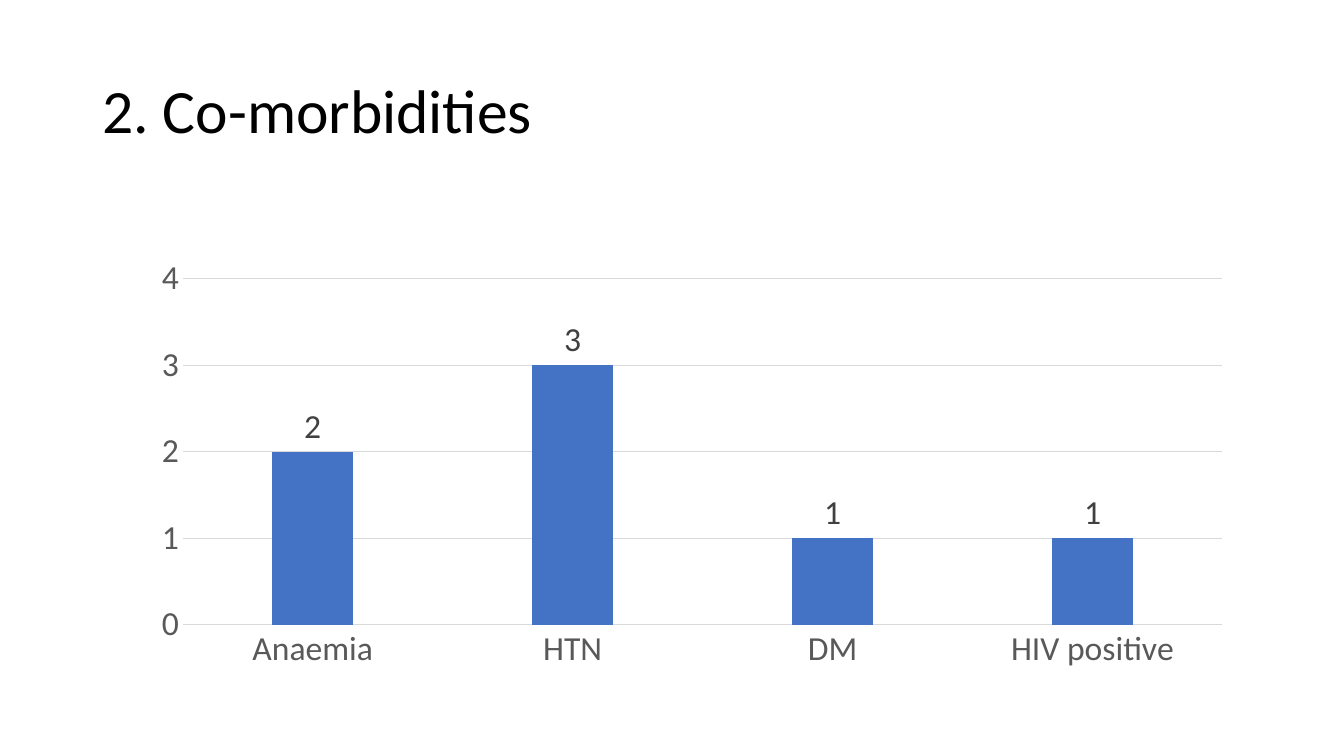
import dataclasses

import lxml.etree
import pptx
import pptx.chart.data
import pptx.dml.color
import pptx.enum.chart
import pptx.enum.text
import pptx.oxml
import pptx.oxml.ns
import pptx.util

Pt = pptx.util.Pt


@dataclasses.dataclass
class Theme:
    face: str = "Calibri"
    ink: str = "000000"
    axis: str = "595959"
    label: str = "404040"
    grid: str = "D9D9D9"
    bar: str = "4472C4"
    head: int = 44
    body: int = 24
    rule: float = 0.75


class Deck:
    def __init__(self, theme):
        self.theme = theme
        self.file = pptx.Presentation()
        self.file.slide_width = Pt(960)
        self.file.slide_height = Pt(540)
        self.slide = self.file.slides.add_slide(self.file.slide_layouts[6])

    def color(self, code):
        return pptx.dml.color.RGBColor.from_string(code)

    def style(self, font, size, code):
        font.name = self.theme.face
        font.size = Pt(size)
        font.bold = False
        font.color.rgb = self.color(code)

    def rule(self, line):
        line.color.rgb = self.color(self.theme.grid)
        line.width = Pt(self.theme.rule)

    def title(self, text, box):
        frame = self.slide.shapes.add_textbox(*map(Pt, box)).text_frame
        frame.word_wrap = True
        frame.vertical_anchor = pptx.enum.text.MSO_ANCHOR.MIDDLE
        para = frame.paragraphs[0]
        para.text = text
        para.line_spacing = 0.9
        self.style(para.font, self.theme.head, self.theme.ink)

    def columns(self, name, values, box, plot, top):
        kinds = pptx.enum.chart
        data = pptx.chart.data.CategoryChartData()
        data.categories = list(values)
        data.add_series(name, list(values.values()))
        chart = self.slide.shapes.add_chart(
            kinds.XL_CHART_TYPE.COLUMN_CLUSTERED, *map(Pt, box), data
        ).chart
        chart.has_legend = False
        chart.has_title = False
        self.style(chart.font, self.theme.body, self.theme.ink)

        for axis in (chart.category_axis, chart.value_axis):
            axis.major_tick_mark = kinds.XL_TICK_MARK.NONE
            axis.minor_tick_mark = kinds.XL_TICK_MARK.NONE
            self.style(axis.tick_labels.font, self.theme.body, self.theme.axis)
        self.rule(chart.category_axis.format.line)
        scale = chart.value_axis
        scale.format.line.fill.background()
        scale.minimum_scale, scale.maximum_scale = 0, top
        scale.major_unit = 1
        self.rule(scale.major_gridlines.format.line)

        bars = chart.plots[0]
        bars.gap_width = 219
        bars.overlap = -27
        bars.vary_by_categories = False
        fill = bars.series[0].format.fill
        fill.solid()
        fill.fore_color.rgb = self.color(self.theme.bar)
        labels = bars.series[0].data_labels
        labels.show_value = True
        labels.position = kinds.XL_LABEL_POSITION.OUTSIDE_END
        self.style(labels.font, self.theme.body, self.theme.label)
        self.place(chart, plot)

    def place(self, chart, plot):
        qn = pptx.oxml.ns.qn
        area = chart._chartSpace.find(".//" + qn("c:plotArea"))
        for old in area.findall(qn("c:layout")):
            area.remove(old)
        layout = lxml.etree.Element(qn("c:layout"))
        area.insert(0, layout)
        manual = lxml.etree.SubElement(layout, qn("c:manualLayout"))
        parts = [("layoutTarget", "inner"), ("xMode", "edge"), ("yMode", "edge")]
        parts += zip("xywh", plot)
        for tag, value in parts:
            lxml.etree.SubElement(manual, qn("c:" + tag), val=str(value))


def main():
    deck = Deck(Theme())
    deck.title("2. Co-morbidities", (66, 28.75, 828, 104.4))
    cases = {"Anaemia": 2, "HTN": 3, "DM": 1, "HIV positive": 1}
    deck.columns(
        "Series 1", cases, (66, 143.75, 828, 342.6), (0.078, 0.162, 0.897, 0.721), 4
    )
    deck.file.save("out.pptx")


if __name__ == "__main__":
    main()
